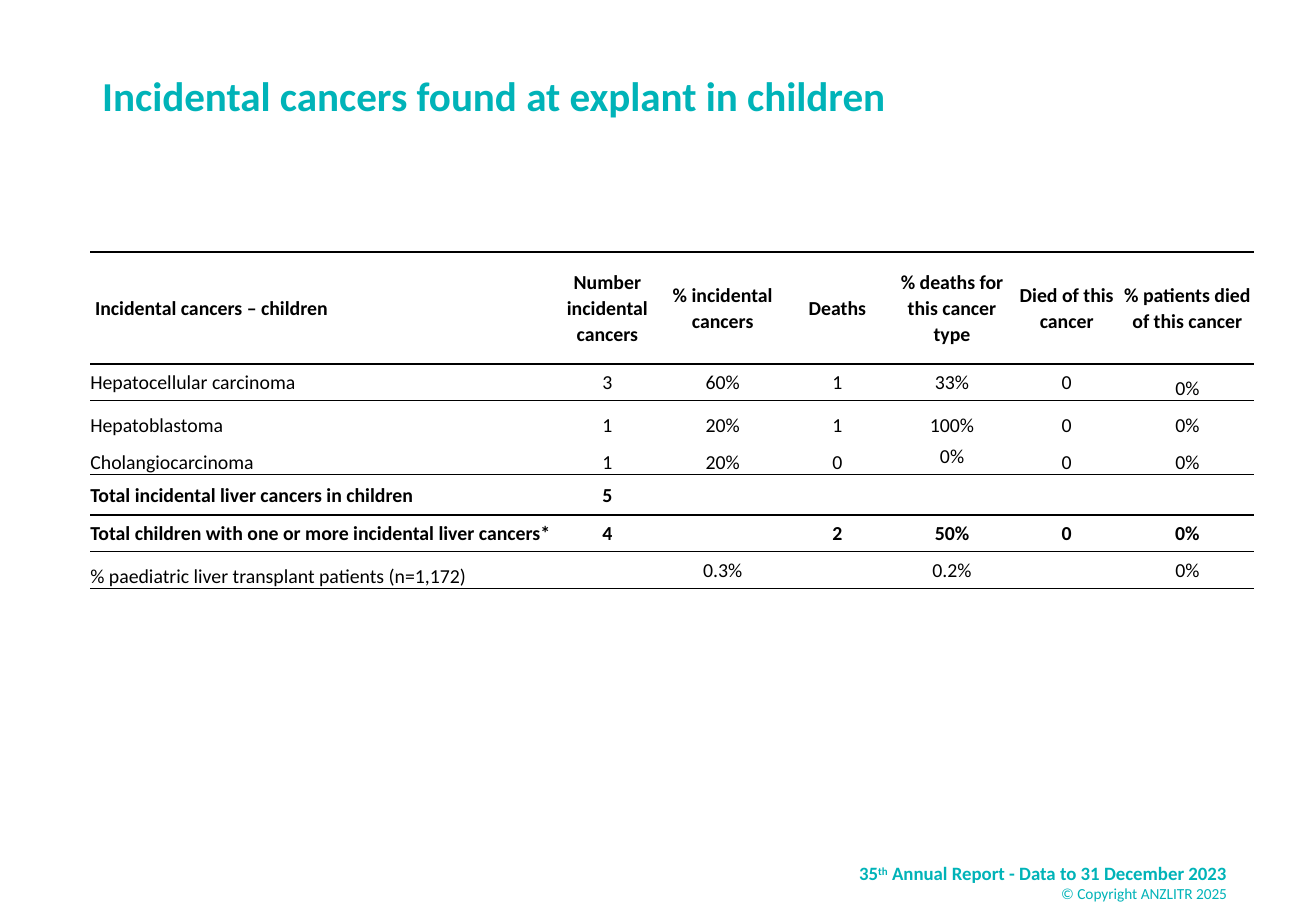
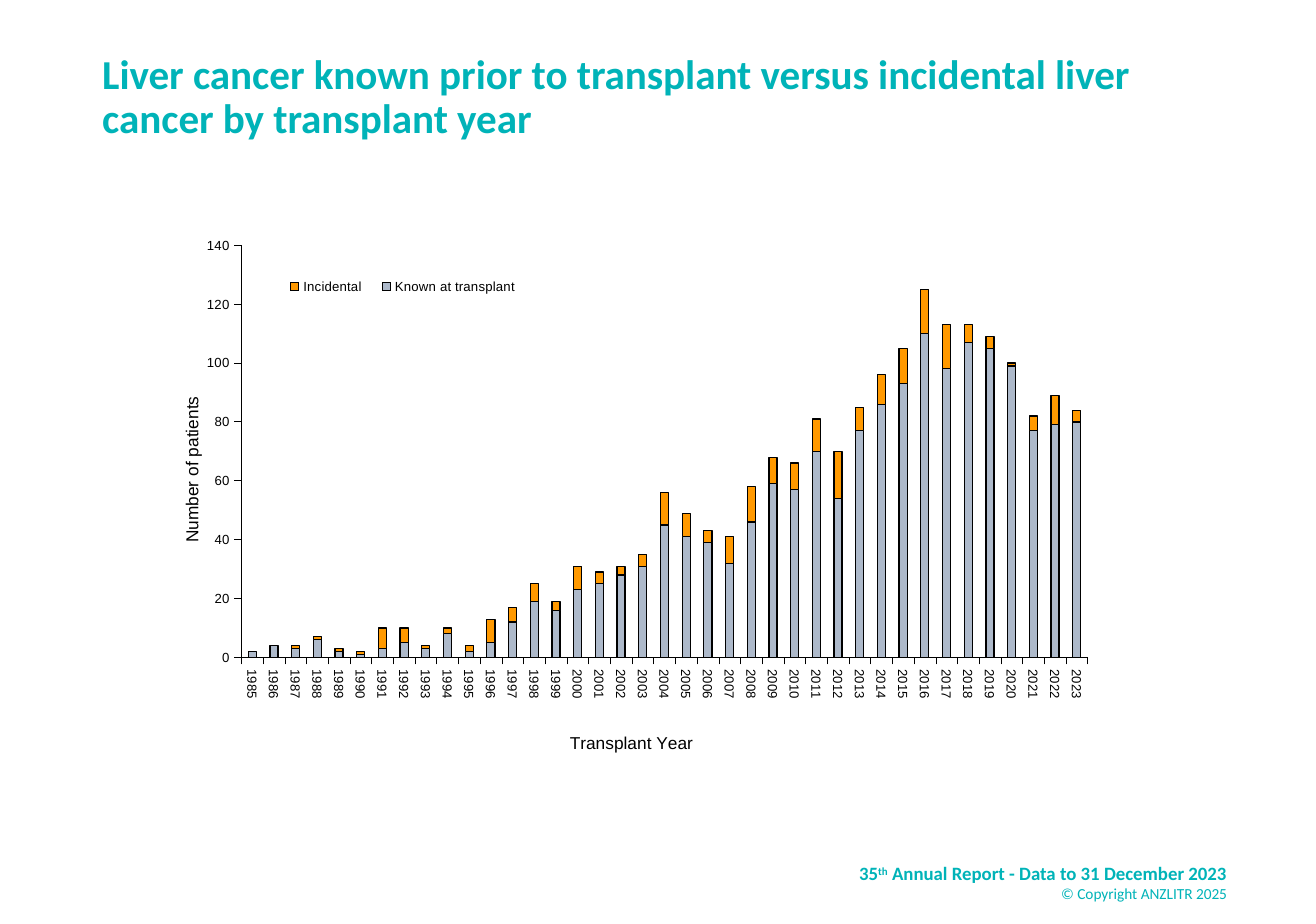
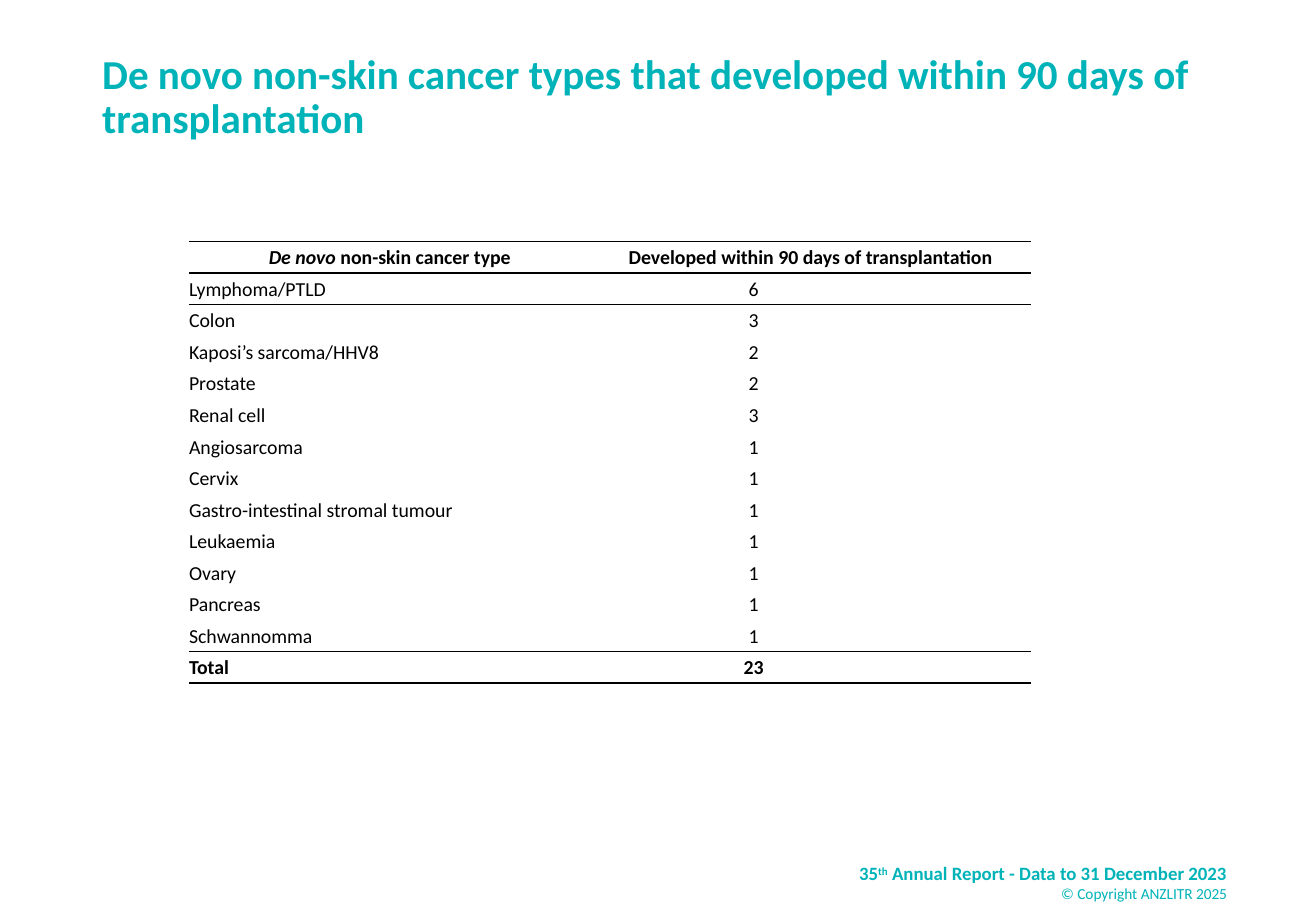
"""Build three slides on liver cancer: two ruled tables and a stacked column chart."""
from dataclasses import dataclass

from lxml import etree
from pptx import Presentation
from pptx.chart.data import CategoryChartData
from pptx.dml.color import RGBColor
from pptx.enum.chart import XL_CHART_TYPE, XL_LEGEND_POSITION, XL_TICK_MARK
from pptx.enum.text import MSO_ANCHOR, MSO_AUTO_SIZE, PP_ALIGN
from pptx.oxml import parse_xml
from pptx.oxml.ns import nsdecls, qn
from pptx.util import Inches, Pt

LEFT, CENTER, RIGHT = PP_ALIGN.LEFT, PP_ALIGN.CENTER, PP_ALIGN.RIGHT
ANCHORS = {"m": MSO_ANCHOR.MIDDLE, "b": MSO_ANCHOR.BOTTOM}
STACKED = XL_CHART_TYPE.COLUMN_STACKED
CORNER = XL_LEGEND_POSITION.CORNER
OUT, NONE = XL_TICK_MARK.OUTSIDE, XL_TICK_MARK.NONE
NO_FIT = MSO_AUTO_SIZE.NONE
NO_GRID = "{2D5ABB26-0587-4C30-8999-92F81FD0307C}"


@dataclass(frozen=True)
class Theme:
    """Colours, fonts and sizes."""
    teal: str = "00B3B8"
    ink: str = "000000"
    known: str = "ADB9CA"
    extra: str = "FF9900"
    font: str = "Calibri"
    plot: str = "Arial"
    title: float = 24.9
    foot: float = 11.4
    note: float = 9.3
    body: float = 12
    axis: float = 10.5
    tick: float = 8
    rule: float = 1


THEME = Theme()

FOOT = [
    [("35", 0), ("th", 30), (" Annual Report - Data to 31 December 2023", 0)],
    [("© Copyright ANZLITR 2025", 0)],
]

CHILD = {
    "title": "Incidental cancers found at explant in children",
    "at": (0.76, 2.12),
    "cols": [3.89, 0.92, 1.02, 0.91, 1.02, 0.91, 1.12],
    "heights": [0.94, 0.31, 0.31, 0.31, 0.34, 0.31, 0.31],
    "rules": {0, 1, 4, 6, 7},
    "bold": {0, 4, 5},
    "anchors": ["mmmmmmm", "mmmmmmb", "bbbbbbb", "bbbbmbb",
                "mmmmmmm", "mmmmmmm", "bmmmmmm"],
    "insets": {(0, 0): (0.04, 0)},
    "middle": {(0, col) for col in range(1, 7)},
    "rows": [
        ["Incidental cancers – children", "Number incidental cancers",
         "% incidental cancers", "Deaths", "% deaths for this cancer type",
         "Died of this cancer", "% patients died of this cancer"],
        ["Hepatocellular carcinoma", "3", "60%", "1", "33%", "0", "0%"],
        ["Hepatoblastoma", "1", "20%", "1", "100%", "0", "0%"],
        ["Cholangiocarcinoma", "1", "20%", "0", "0%", "0", "0%"],
        ["Total incidental liver cancers in children", "5", "", "", "", "", ""],
        ["Total children with one or more incidental liver cancers*",
         "4", "", "2", "50%", "0", "0%"],
        ["% paediatric liver transplant patients (n=1,172)",
         "", "0.3%", "", "0.2%", "", "0%"],
    ],
}

TYPES = [
    ("Lymphoma/PTLD", "6"), ("Colon", "3"), ("Kaposi’s sarcoma/HHV8", "2"),
    ("Prostate", "2"), ("Renal cell", "3"), ("Angiosarcoma", "1"),
    ("Cervix", "1"), ("Gastro-intestinal stromal tumour", "1"),
    ("Leukaemia", "1"), ("Ovary", "1"), ("Pancreas", "1"),
    ("Schwannomma", "1"), ("Total", "23"),
]
COUNT = len(TYPES) + 1

NOVO = {
    "title": "De novo non-skin cancer types that developed within 90 days of "
             "transplantation",
    "at": (1.59, 2.03),
    "cols": [3.38, 3.7],
    "heights": [3.72 / COUNT] * COUNT,
    "rules": {0, 1, COUNT - 1, COUNT},
    "bold": {0, COUNT - 1},
    "anchors": ["mm"] * COUNT,
    "insets": {(row, 1): (0, 0.96) for row in range(1, COUNT)},
    "middle": {(0, 0)},
    "rows": [[[("De novo", True), (" non-skin cancer type", False)],
              "Developed within 90 days of transplantation"], *TYPES],
}

YEARS = {
    "title": "Liver cancer known prior to transplant versus incidental liver "
             "cancer by transplant year",
    "at": (1.42, 1.73, 7.73, 4.65),
    "cats": [str(year) for year in range(1985, 2024)],
    "series": [
        ("Known at transplant", THEME.known,
         [2, 4, 3, 6, 2, 1, 3, 5, 3, 8, 2, 5, 12, 19, 16, 23, 25, 28, 31, 45,
          41, 39, 32, 46, 59, 57, 70, 54, 77, 86, 93, 110, 98, 107, 105, 99,
          77, 79, 80]),
        ("Incidental", THEME.extra,
         [None, None, 1, 1, 1, 1, 7, 5, 1, 2, 2, 8, 5, 6, 3, 8, 4, 3, 4, 11,
          8, 4, 9, 12, 9, 9, 11, 16, 8, 10, 12, 15, 15, 6, 4, 1, 5, 10, 4]),
    ],
}


def style(font, size, color=THEME.ink, bold=False, name=THEME.font):
    font.size, font.bold, font.name = Pt(size), bold, name
    font.color.rgb = RGBColor.from_string(color)


def stroke(line, width):
    line.color.rgb = RGBColor.from_string(THEME.ink)
    line.width = Pt(width)


def start(deck, text):
    slide = deck.slides.add_slide(deck.slide_layouts[5])
    head = slide.shapes.title
    head.left, head.top, head.width, head.height = map(
        Inches, (0.76, 0.28, 9.54, 1.09))
    frame = head.text_frame
    frame.word_wrap, frame.auto_size = True, NO_FIT
    frame.vertical_anchor = ANCHORS["m"]
    para = frame.paragraphs[0]
    para.alignment, para.line_spacing = LEFT, 0.9
    run = para.add_run()
    run.text = text
    style(run.font, THEME.title, THEME.teal, True)
    return slide


def add_foot(slide):
    box = slide.shapes.add_textbox(*map(Inches, (6.69, 7.2, 3.73, 0.41)))
    frame = box.text_frame
    frame.word_wrap = True
    for idx, runs in enumerate(FOOT):
        para = frame.add_paragraph() if idx else frame.paragraphs[0]
        para.alignment = RIGHT
        for text, lift in runs:
            run = para.add_run()
            run.text = text
            style(run.font, THEME.note if idx else THEME.foot, THEME.teal, not idx)
            if lift:
                run.font._element.set("baseline", str(lift * 1000))
    slide.slide_layout.shapes._spTree.append(box._element)


def add_rules(cell, sides):
    props = cell._tc.get_or_add_tcPr()
    for idx, side in enumerate(sides):
        props.insert(idx, parse_xml(
            f'<a:{side} {nsdecls("a")} w="{Pt(THEME.rule)}"><a:solidFill>'
            f'<a:srgbClr val="{THEME.ink}"/></a:solidFill></a:{side}>'))


def fill_cell(cell, data, row, col):
    cell.fill.background()
    cell.margin_top = cell.margin_bottom = 0
    pad = data["insets"].get((row, col), (0, 0))
    cell.margin_left, cell.margin_right = map(Inches, pad)
    cell.vertical_anchor = ANCHORS[data["anchors"][row][col]]
    add_rules(cell, [side for side, edge in (("lnT", row), ("lnB", row + 1))
                     if edge in data["rules"]])
    text = data["rows"][row][col]
    if not text:
        return
    para = cell.text_frame.paragraphs[0]
    para.line_spacing = 1.07
    para.alignment = CENTER if col or (row, col) in data["middle"] else LEFT
    for part, slant in [(text, False)] if isinstance(text, str) else text:
        run = para.add_run()
        run.text = part
        style(run.font, THEME.body, bold=row in data["bold"])
        run.font.italic = slant


def add_grid(slide, data):
    cols, heights = data["cols"], data["heights"]
    spot = (*data["at"], sum(cols), sum(heights))
    table = slide.shapes.add_table(len(heights), len(cols), *map(Inches, spot)).table
    table.first_row = table.horz_banding = False
    table._tbl.tblPr.find(qn("a:tableStyleId")).text = NO_GRID
    for col, width in enumerate(cols):
        table.columns[col].width = Inches(width)
    for row, height in enumerate(heights):
        table.rows[row].height = Inches(height)
        for col in range(len(cols)):
            fill_cell(table.cell(row, col), data, row, col)


def place(part, index, inner=False, **spots):
    old = part.find(qn("c:layout"))
    if old is not None:
        part.remove(old)
    layout = etree.Element(qn("c:layout"))
    manual = etree.SubElement(layout, qn("c:manualLayout"))
    tags = {"layoutTarget": "inner"} if inner else {}
    tags.update(xMode="edge", yMode="edge", **spots)
    for tag, val in tags.items():
        etree.SubElement(manual, qn(f"c:{tag}")).set("val", str(val))
    part.insert(index, layout)


def set_axis(axis, text, width, x, y):
    axis.has_major_gridlines = False
    axis.major_tick_mark, axis.minor_tick_mark = OUT, NONE
    stroke(axis.format.line, width)
    style(axis.tick_labels.font, THEME.tick, name=THEME.plot)
    run = axis.axis_title.text_frame.paragraphs[0].add_run()
    run.text = text
    style(run.font, THEME.axis, name=THEME.plot)
    place(axis.axis_title._element, 1, x=x, y=y)


def add_bars(slide, data):
    feed = CategoryChartData()
    feed.categories = data["cats"]
    for name, _, vals in data["series"]:
        feed.add_series(name, vals)
    spot = map(Inches, data["at"])
    chart = slide.shapes.add_chart(STACKED, *spot, feed).chart
    chart.has_title = False
    style(chart.font, THEME.tick, name=THEME.plot)
    plot = chart.plots[0]
    plot.gap_width, plot.overlap, plot.vary_by_categories = 169, 100, False
    for series, (_, color, _) in zip(plot.series, data["series"]):
        series.format.fill.solid()
        series.format.fill.fore_color.rgb = RGBColor.from_string(color)
        stroke(series.format.line, 0.75)
    place(chart._chartSpace.chart.plotArea, 0, inner=True,
          x=0.079, y=0.072, w=0.921, h=0.749)

    cat, val = chart.category_axis, chart.value_axis
    set_axis(cat, "Transplant Year", 0.19, 0.433, 0.95)
    set_axis(val, "Number of patients", 0.57, 0.009, 0.342)
    val.minimum_scale, val.maximum_scale, val.major_unit = 0, 140, 20
    turn = cat._element.find(qn("c:txPr")).find(qn("a:bodyPr"))
    turn.set("rot", "5400000")
    turn.set("vert", "horz")

    chart.has_legend = True
    legend = chart.legend
    legend.position, legend.include_in_layout = CORNER, True
    style(legend.font, THEME.tick, name=THEME.plot)
    place(legend._element, 1, x=0.115, y=0.122, w=0.28, h=0.05)


def main():
    deck = Presentation()
    deck.slide_width, deck.slide_height = Inches(11.07), Inches(7.77)
    for data, draw in ((CHILD, add_grid), (YEARS, add_bars), (NOVO, add_grid)):
        slide = start(deck, data["title"])
        draw(slide, data)
    add_foot(slide)
    deck.save("out.pptx")


if __name__ == "__main__":
    main()
